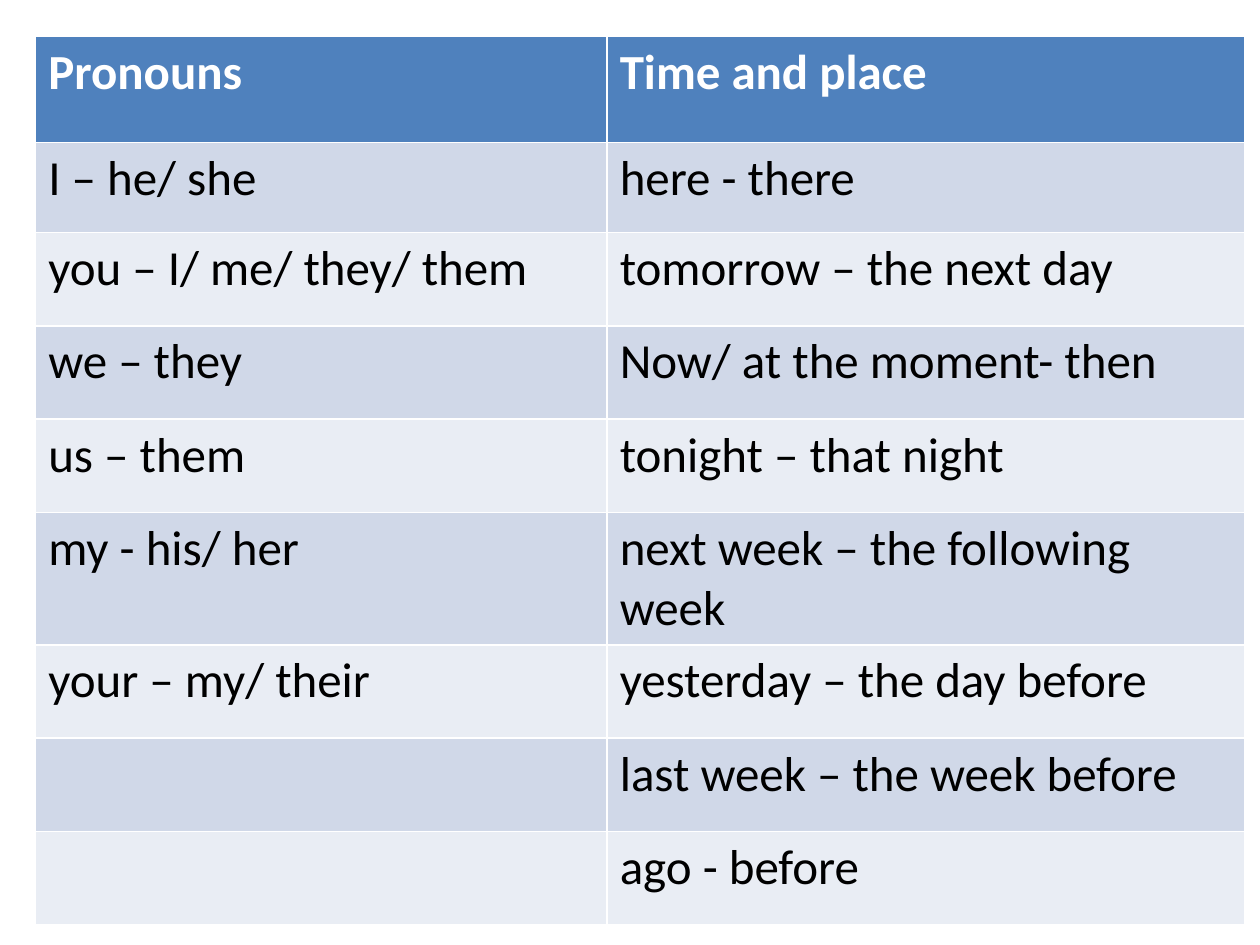
"""Build a slide with a table of pronoun, time and place changes in reported speech."""
import dataclasses

import pptx
import pptx.dml.color
import pptx.util

Cm = pptx.util.Cm
RGB = pptx.dml.color.RGBColor.from_string


@dataclasses.dataclass(frozen=True)
class Theme:
    font: str = "Calibri"
    size: int = 28
    heading_text: str = "FFFFFF"
    body_text: str = "000000"
    heading_fill: str = "4F81BD"
    band_fills: tuple = ("E9EDF4", "D0D8E8")


theme = Theme()


def write(cell, text, *, color, bold=False):
    run = cell.text_frame.paragraphs[0].add_run()
    run.text = text
    run.font.name = theme.font
    run.font.size = pptx.util.Pt(theme.size)
    run.font.bold = bold
    run.font.color.rgb = RGB(color)


word_changes = [
    ("Pronouns", "Time and place"),
    ("I – he/ she", "here - there"),
    ("you – I/ me/ they/ them", "tomorrow – the next day"),
    ("we – they", "Now/ at the moment- then"),
    ("us – them", "tonight – that night"),
    ("my - his/ her", "next week – the following week"),
    ("your – my/ their", "yesterday – the day before"),
    ("", "last week – the week before"),
    ("", "ago - before"),
]
column_widths = [Cm(11.52), Cm(12.86)]
row_heights = [Cm(2.13), Cm(1.82)] + [Cm(1.88)] * (len(word_changes) - 2)

presentation = pptx.Presentation()
presentation.slide_width = Cm(25.4)
presentation.slide_height = Cm(19.05)
slide = presentation.slides.add_slide(presentation.slide_layouts[6])

changes_table = slide.shapes.add_table(
    len(word_changes), len(column_widths), Cm(0.72), Cm(0.74),
    sum(column_widths), sum(row_heights),
).table
for column, width in zip(changes_table.columns, column_widths):
    column.width = width

for index, (row, texts) in enumerate(zip(changes_table.rows, word_changes)):
    row.height = row_heights[index]
    heading = index == 0
    fill = theme.heading_fill if heading else theme.band_fills[index % 2]
    color = theme.heading_text if heading else theme.body_text
    for cell, text in zip(row.cells, texts):
        cell.fill.solid()
        cell.fill.fore_color.rgb = RGB(fill)
        if text:
            write(cell, text, color=color, bold=heading)

presentation.save("out.pptx")
